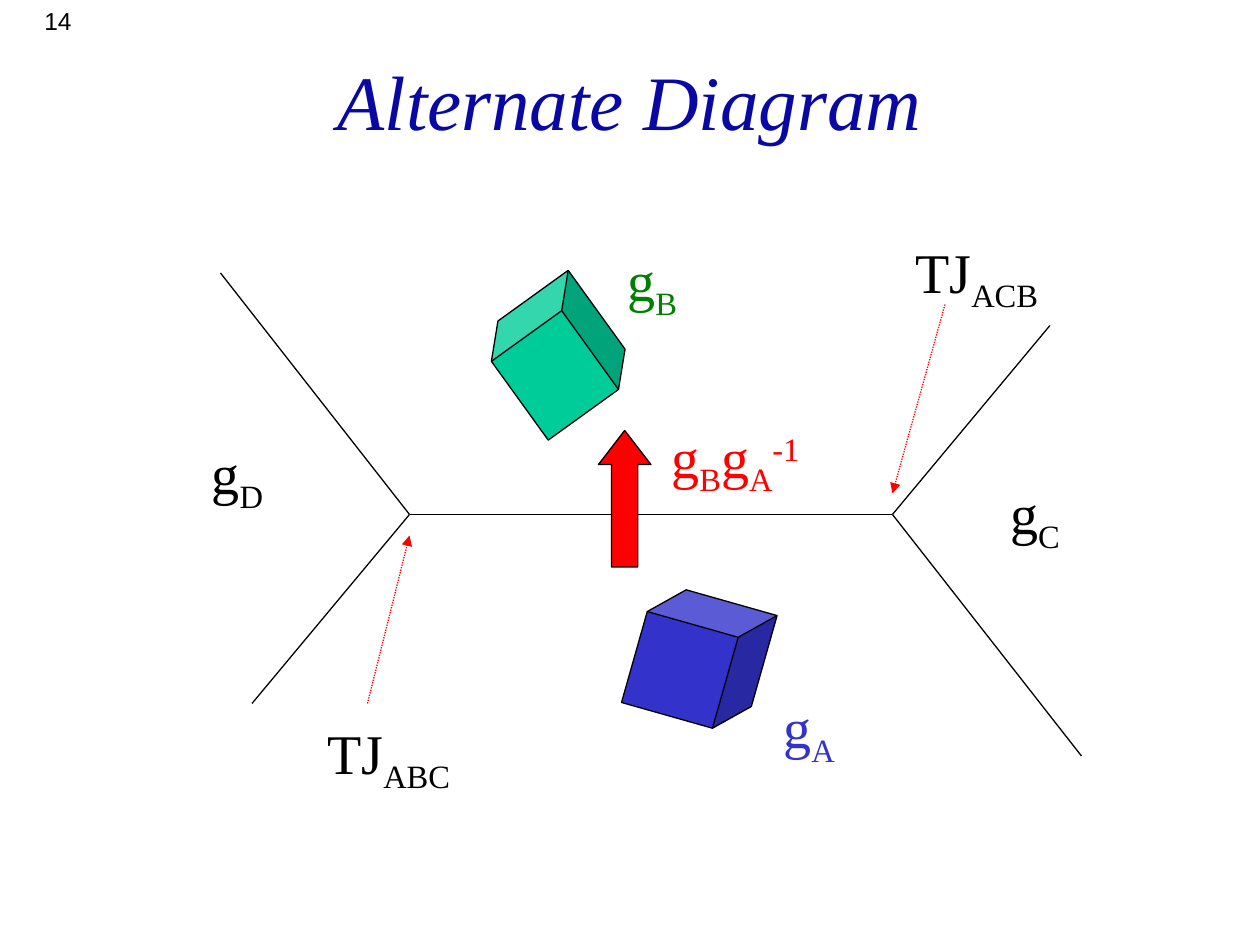
"""Build the Alternate Diagram slide: two triple junctions and the grains around them."""
import pptx
import pptx.util
import pptx.dml.color
import pptx.enum.dml
import pptx.enum.shapes
import pptx.enum.text
import pptx.oxml
import pptx.oxml.ns

Pt = pptx.util.Pt
RGB = pptx.dml.color.RGBColor
KIND = pptx.enum.shapes.MSO_SHAPE
ALIGN = pptx.enum.text.PP_ALIGN
BLACK = RGB(0, 0, 0)
NAVY = RGB(0x09, 0x08, 0xA3)
RED = RGB(0xFF, 0, 0)
GREEN = RGB(0, 0x80, 0)
TEAL = RGB(0, 0xCC, 0x99)
BLUE = RGB(0x33, 0x33, 0xCC)
SERIF = "Times New Roman"

deck = pptx.Presentation()
deck.slide_width, deck.slide_height = Pt(720), Pt(540)
slide = deck.slides.add_slide(deck.slide_layouts[5])
shapes = slide.shapes


def set_font(font, name, size, color):
    font.name, font.size = name, Pt(size)
    font.color.rgb = color


def add_line(start, end, color):
    line = shapes.add_connector(
        pptx.enum.shapes.MSO_CONNECTOR.STRAIGHT, *map(Pt, start + end))
    line.line.color.rgb = color
    line.line.width = Pt(0.75)
    props = line._element.spPr
    props.append(pptx.oxml.parse_xml(
        "<a:effectLst %s/>" % pptx.oxml.ns.nsdecls("a")))
    return line


page = shapes.add_textbox(0, 0, Pt(48), Pt(24)).text_frame
page.word_wrap = True
page.text = "14"
page.paragraphs[0].alignment = ALIGN.RIGHT
set_font(page.paragraphs[0].font, "Arial", 14, BLACK)

title = shapes.title
title.left, title.top, title.width, title.height = map(Pt, (54, 12, 612, 90))
title.text_frame.text = "Alternate Diagram"
title.text_frame.vertical_anchor = pptx.enum.text.MSO_ANCHOR.MIDDLE
head = title.text_frame.paragraphs[0]
head.alignment = ALIGN.CENTER
head.font.italic = True
set_font(head.font, SERIF, 44, NAVY)

left, right = (234, 294), (510, 294)
for start, end in [
    (left, right),
    (right, (600, 186)),
    ((144, 402), left),
    (left, (126, 156)),
    ((618, 432), right),
]:
    add_line(start, end, BLACK)

for start, end in [((210, 402), (234, 306)), ((540, 174), (510, 282))]:
    line = add_line(start, end, RED)
    line.line.dash_style = pptx.enum.dml.MSO_LINE.ROUND_DOT
    line.line._get_or_add_ln().append(pptx.oxml.parse_xml(
        '<a:tailEnd type="triangle" %s/>' % pptx.oxml.ns.nsdecls("a")))

for kind, box, turn, fill, adjust in [
    (KIND.CUBE, (286, 167, 66, 72), 324.2, TEAL, [0.25]),
    (KIND.CUBE, (363.6, 340.6, 72, 72), 15.8, BLUE, [0.25]),
    (KIND.UP_ARROW, (342, 246, 30, 78), 0, RED, [0.5, 0.65]),
]:
    shape = shapes.add_shape(kind, *map(Pt, box))
    shape.shadow.inherit = False
    shape.rotation = turn
    shape.fill.solid()
    shape.fill.fore_color.rgb = fill
    shape.line.color.rgb = BLACK
    shape.line.width = Pt(0.75)
    for index, value in enumerate(adjust):
        shape.adjustments[index] = value

SUB, SUPER = -25000, 30000
for x, y, width, color, parts in [
    (440.6, 392.4, 45, BLUE, [("g", 0), ("A", SUB)]),
    (351.4, 136.8, 45, GREEN, [("g", 0), ("B", SUB)]),
    (570.2, 270, 45, BLACK, [("g", 0), ("C", SUB)]),
    (113.8, 247, 45, BLACK, [("g", 0), ("D", SUB)]),
    (180, 406.8, 89, BLACK, [("TJ", 0), ("ABC", SUB)]),
    (516, 132, 89, BLACK, [("TJ", 0), ("ACB", SUB)]),
    (376.6, 237.6, 93, RED,
     [("g", 0), ("B", SUB), ("g", 0), ("A", SUB), ("-1", SUPER)]),
]:
    frame = shapes.add_textbox(Pt(x), Pt(y), Pt(width), Pt(45.6)).text_frame
    frame.word_wrap = False
    frame.auto_size = pptx.enum.text.MSO_AUTO_SIZE.SHAPE_TO_FIT_TEXT
    label = frame.paragraphs[0]
    set_font(label.font, SERIF, 32, color)
    for text, shift in parts:
        run = label.add_run()
        run.text = text
        if shift:
            run._r.get_or_add_rPr().set("baseline", str(shift))

deck.save("out.pptx")
